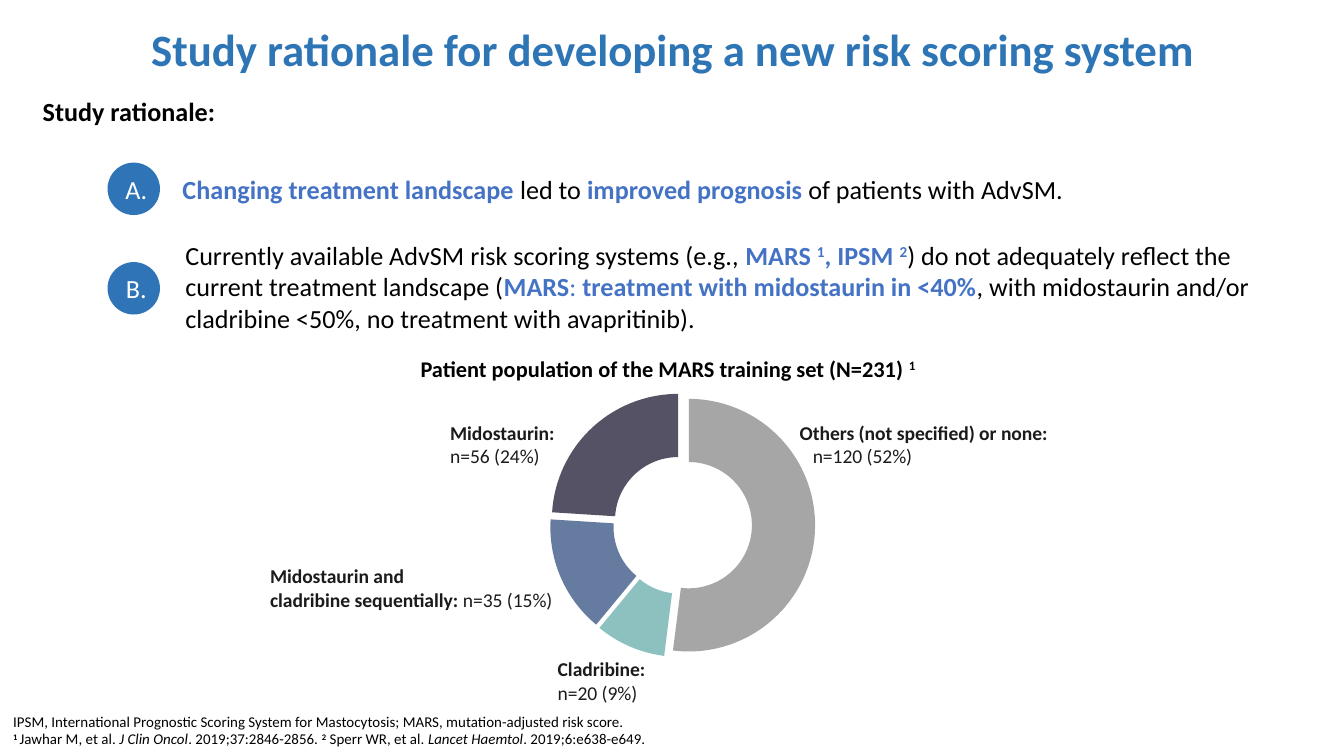
from dataclasses import dataclass

from lxml import etree
from pptx import Presentation
from pptx.chart.data import CategoryChartData
from pptx.dml.color import RGBColor
from pptx.enum import chart as ch, shapes, text
from pptx.oxml.ns import qn
from pptx.util import Pt

TITLE_BLUE = RGBColor(0x2E, 0x75, 0xB6)
BADGE_BLUE = RGBColor(0x2E, 0x74, 0xB6)
ACCENT = RGBColor(0x44, 0x72, 0xC4)
BLACK = RGBColor(0, 0, 0)
WHITE = RGBColor(0xFF, 0xFF, 0xFF)
LABEL_INK = RGBColor(0x1B, 0x1B, 0x1B)
FONT = "Calibri"
BADGE_LEFT, BADGE_SIZE = 57.6, 28.1


@dataclass(frozen=True)
class Run:
    words: str
    bold: bool = False
    italic: bool = False
    raised: bool = False
    color: RGBColor | None = None


@dataclass(frozen=True)
class Box:
    left: float
    top: float
    width: float
    height: float

    def lengths(self) -> tuple:
        return Pt(self.left), Pt(self.top), Pt(self.width), Pt(self.height)


@dataclass(frozen=True)
class Reason:
    letter: str
    badge_top: float
    box: Box
    runs: list[Run]


@dataclass(frozen=True)
class Treatment:
    share: int
    color: RGBColor
    box: Box
    lines: list[list[Run]]
    indent: float = 0


def strong(words: str, **style) -> Run:
    return Run(words, bold=True, **style)


def accent(words: str, **style) -> Run:
    return strong(words, color=ACCENT, **style)


REASONS = [
    Reason("A.", 87.1, Box(90.7, 89.3, 571, 24.2), [
        accent("Changing treatment landscape "),
        Run("led to "),
        accent("improved prognosis "),
        Run("of patients with AdvSM."),
    ]),
    Reason("B.", 140.4, Box(92.2, 124.7, 587.5, 58.2), [
        Run("Currently available AdvSM risk scoring systems (e.g., "),
        accent("MARS "),
        accent("1", raised=True),
        accent(", IPSM "),
        accent("2", raised=True),
        Run(") do not adequately reflect the current treatment landscape ("),
        accent("MARS"),
        Run(": ", color=ACCENT),
        accent("treatment with midostaurin in <40%"),
        Run(", with midostaurin and/or cladribine <50%, "
            "no treatment with avapritinib)."),
    ]),
]

TREATMENTS = [
    Treatment(52, RGBColor(0xA6, 0xA6, 0xA6), Box(428.4, 221.8, 137, 32.7),
              [[strong("Others (not specified) or none:")],
               [Run("n=120 (52%)")]], indent=7),
    Treatment(9, RGBColor(0x8C, 0xC1, 0xC0), Box(298.8, 348.5, 67, 32.7),
              [[strong("Cladribine:")], [Run("n=20 (9%)")]]),
    Treatment(15, RGBColor(0x66, 0x7B, 0xA0), Box(144.7, 298.8, 163.4, 32.7),
              [[strong("Midostaurin and")],
               [strong("cladribine sequentially: "), Run("n=35 (15%)")]]),
    Treatment(24, RGBColor(0x54, 0x52, 0x64), Box(241.2, 221.8, 67, 32.7),
              [[strong("Midostaurin:")], [Run("n=56 (24%)")]]),
]

FOOTNOTES = [
    [Run("IPSM, International Prognostic Scoring System for Mastocytosis; "
         "MARS, mutation-adjusted risk score.")],
    [strong("1 ", raised=True), Run("Jawhar M, et al. "),
     Run("J Clin Oncol", italic=True), Run(". 2019;37:2846-2856. "),
     strong("2", raised=True), Run(" Sperr WR, et al. "),
     Run("Lancet Haemtol", italic=True), Run(". 2019;6:e638-e649.")],
]


def write(frame, lines: list[list[Run]], *, size: float,
          color: RGBColor = BLACK, align=text.PP_ALIGN.LEFT,
          anchor=text.MSO_ANCHOR.TOP, wrap: bool = True,
          last_indent: float = 0) -> None:
    frame.word_wrap = wrap
    frame.vertical_anchor = anchor
    for number, line in enumerate(lines):
        paragraph = frame.add_paragraph() if number else frame.paragraphs[0]
        paragraph.alignment = align
        if last_indent and number == len(lines) - 1:
            paragraph._p.get_or_add_pPr().set("marL", str(Pt(last_indent)))
        for part in line:
            run = paragraph.add_run()
            run.text = part.words
            font = run.font
            font.name, font.size = FONT, Pt(size)
            font.bold, font.italic = part.bold, part.italic
            font.color.rgb = part.color or color
            if part.raised:
                font._element.set("baseline", "30000")


def add_text(slide, box: Box, lines: list[list[Run]], *,
             side_inset: float = 7.2, **style) -> None:
    frame = slide.shapes.add_textbox(*box.lengths()).text_frame
    frame.margin_left = frame.margin_right = Pt(side_inset)
    frame.auto_size = text.MSO_AUTO_SIZE.SHAPE_TO_FIT_TEXT
    write(frame, lines, **style)


def add_reason(slide, reason: Reason) -> None:
    place = Box(BADGE_LEFT, reason.badge_top, BADGE_SIZE, BADGE_SIZE)
    badge = slide.shapes.add_shape(shapes.MSO_SHAPE.OVAL, *place.lengths())
    badge.shadow.inherit = False
    badge.fill.solid()
    badge.fill.fore_color.rgb = BADGE_BLUE
    badge.line.fill.background()
    frame = badge.text_frame
    frame.margin_left = Pt(2.9)
    frame.margin_top = frame.margin_right = frame.margin_bottom = 0
    write(frame, [[Run(reason.letter)]], size=14, color=WHITE, wrap=False,
          align=text.PP_ALIGN.CENTER, anchor=text.MSO_ANCHOR.MIDDLE)
    add_text(slide, reason.box, [reason.runs], size=14)


def set_plot_area(chart, **fractions: float) -> None:
    """Fix the plot area, given as fractions of the chart frame."""
    plot_area = chart._chartSpace.chart.plotArea
    for old in plot_area.findall(qn("c:layout")):
        plot_area.remove(old)
    layout = etree.Element(qn("c:layout"))
    manual = etree.SubElement(layout, qn("c:manualLayout"))
    settings = {"layoutTarget": "inner", "xMode": "edge", "yMode": "edge"}
    for tag, value in (settings | fractions).items():
        etree.SubElement(manual, qn(f"c:{tag}")).set("val", str(value))
    plot_area.insert(0, layout)


def add_doughnut(slide, box: Box, treatments: list[Treatment]) -> None:
    data = CategoryChartData()
    data.categories = [str(n + 1) for n in range(len(treatments))]
    data.add_series("Series 1", [t.share for t in treatments])
    chart = slide.shapes.add_chart(ch.XL_CHART_TYPE.DOUGHNUT,
                                   *box.lengths(), data).chart
    chart.has_legend = chart.has_title = False
    chart.font.name, chart.font.size = FONT, Pt(10)
    chart.font.color.rgb = BLACK
    set_plot_area(chart, x=0.33, y=0.07, w=0.34, h=0.87)
    series = chart.plots[0].series[0]
    for number, treatment in enumerate(treatments):
        part = series.points[number].format
        part.fill.solid()
        part.fill.fore_color.rgb = treatment.color
        part.line.fill.background()
    explosion = etree.Element(qn("c:explosion"))
    explosion.set("val", "10")
    series._element.find(qn("c:dPt")).addprevious(explosion)


def main() -> None:
    deck = Presentation()
    deck.slide_width, deck.slide_height = Pt(720), Pt(405)
    slide = deck.slides.add_slide(deck.slide_layouts[5])

    title = slide.shapes.title
    title.left, title.top, title.width, title.height = Box(
        41, 3.6, 638.6, 48.2).lengths()
    title.text_frame.auto_size = text.MSO_AUTO_SIZE.NONE
    write(title.text_frame,
          [[strong("Study rationale for developing a new risk scoring system")]],
          size=24, color=TITLE_BLUE, align=text.PP_ALIGN.CENTER,
          anchor=text.MSO_ANCHOR.MIDDLE)
    title.text_frame.paragraphs[0].line_spacing = 0.9

    add_text(slide, Box(15.8, 47.5, 108, 24.2), [[strong("Study rationale:")]],
             size=14, wrap=False)
    for reason in REASONS:
        add_reason(slide, reason)

    add_doughnut(slide, Box(156.2, 198.7, 419, 163.4), TREATMENTS)
    add_text(slide, Box(218.2, 186.5, 283, 21.8),
             [[strong("Patient population of the MARS training set (N=231) "),
               strong("1", raised=True)]], size=12, wrap=False)
    for treatment in TREATMENTS:
        add_text(slide, treatment.box, treatment.lines, size=10.5,
                 color=LABEL_INK, side_inset=0, last_indent=treatment.indent)
    add_text(slide, Box(0, 378, 554.4, 26.7), FOOTNOTES, size=8)

    deck.save("out.pptx")


if __name__ == "__main__":
    main()
